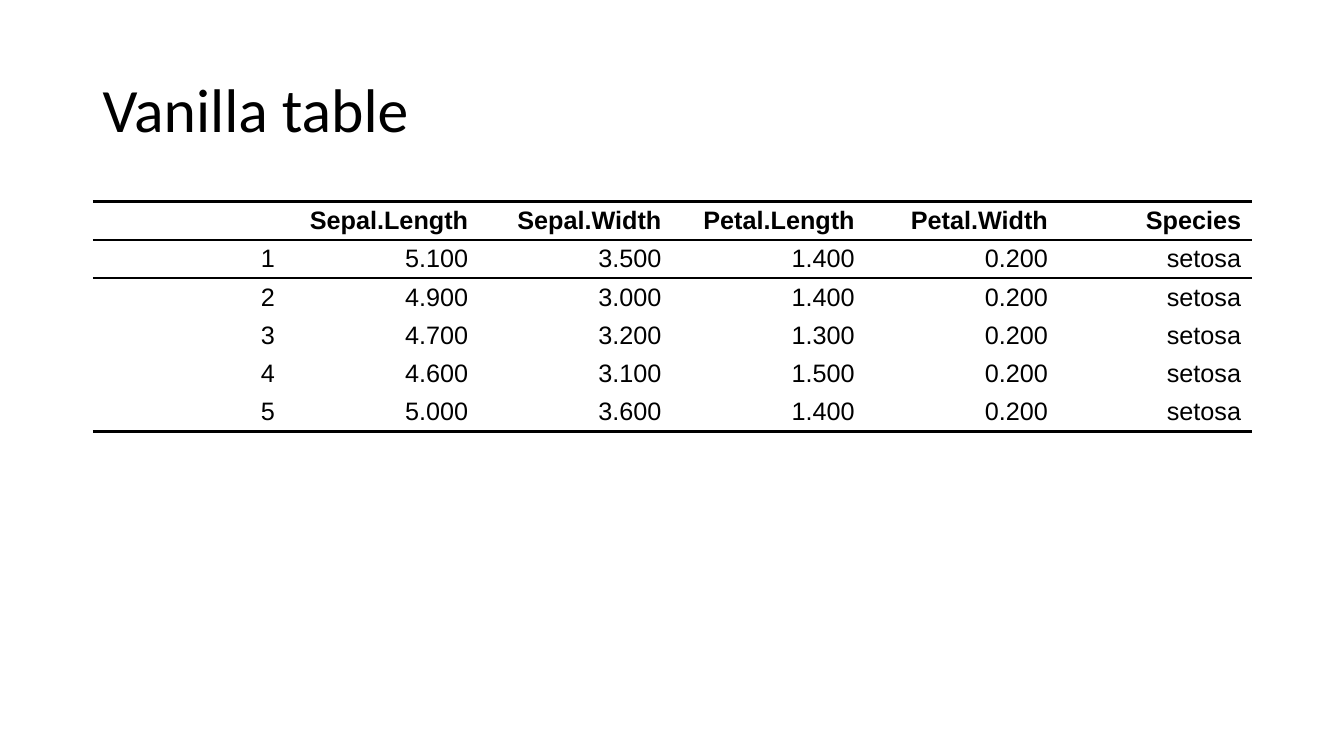
from lxml import etree
from pptx import Presentation
from pptx.dml.color import RGBColor
from pptx.enum.text import MSO_ANCHOR, PP_ALIGN
from pptx.oxml.ns import qn
from pptx.util import Inches, Pt

BLACK = RGBColor(0, 0, 0)
WHITE = RGBColor(255, 255, 255)
NO_STYLE = "{2D5ABB26-0587-4C30-8999-92F81FD0307C}"
HEADER = ["", "Sepal.Length", "Sepal.Width", "Petal.Length", "Petal.Width", "Species"]
FLOWERS = [
    ["1", "5.100", "3.500", "1.400", "0.200", "setosa"],
    ["2", "4.900", "3.000", "1.400", "0.200", "setosa"],
    ["3", "4.700", "3.200", "1.300", "0.200", "setosa"],
    ["4", "4.600", "3.100", "1.500", "0.200", "setosa"],
    ["5", "5.000", "3.600", "1.400", "0.200", "setosa"],
]


def write(frame, text, font, size, bold=False, align=PP_ALIGN.LEFT, spacing=1.0, gap=0):
    paragraph = frame.paragraphs[0]
    paragraph.text = text
    paragraph.alignment = align
    paragraph.line_spacing = spacing
    paragraph.space_before = paragraph.space_after = Pt(gap)
    paragraph.font.name = font
    paragraph.font.size = Pt(size)
    paragraph.font.bold = bold
    paragraph.font.color.rgb = BLACK


def add_border(cell, side, width):
    line = etree.SubElement(cell._tc.get_or_add_tcPr(), qn(f"a:{side}"), w=str(Pt(width)))
    fill = etree.SubElement(line, qn("a:solidFill"))
    etree.SubElement(fill, qn("a:srgbClr"), val=str(BLACK))


presentation = Presentation()
presentation.slide_width = Inches(13.33)
presentation.slide_height = Inches(7.5)
slide = presentation.slides.add_slide(presentation.slide_layouts[6])

title = slide.shapes.add_textbox(Inches(0.92), Inches(0.39), Inches(11.5), Inches(1.45)).text_frame
title.word_wrap = True
title.vertical_anchor = MSO_ANCHOR.MIDDLE
write(title, "Vanilla table", "Calibri", 44, spacing=0.9)

rows = [HEADER] + FLOWERS
measurements = slide.shapes.add_table(
    len(rows), len(HEADER), Inches(0.92), Inches(2), Inches(11.5), Inches(0.38 * len(rows))
).table
measurements.first_row = False
measurements.horz_banding = False
measurements._tbl.tblPr.find(qn("a:tableStyleId")).text = NO_STYLE

for row_index, values in enumerate(rows):
    is_header = row_index == 0
    for column_index, value in enumerate(values):
        cell = measurements.cell(row_index, column_index)
        cell.vertical_anchor = MSO_ANCHOR.MIDDLE
        cell.margin_left, cell.margin_right = Inches(0.1), Inches(0.11)
        cell.margin_top = cell.margin_bottom = Inches(0.03)
        write(cell.text_frame, value, "Arial", 18, bold=is_header, align=PP_ALIGN.RIGHT, gap=1)
        if row_index <= 1:
            add_border(cell, "lnT", 2)
        if is_header or row_index == len(rows) - 1:
            add_border(cell, "lnB", 2)
        cell.fill.solid()
        cell.fill.fore_color.rgb = WHITE

presentation.save("out.pptx")
